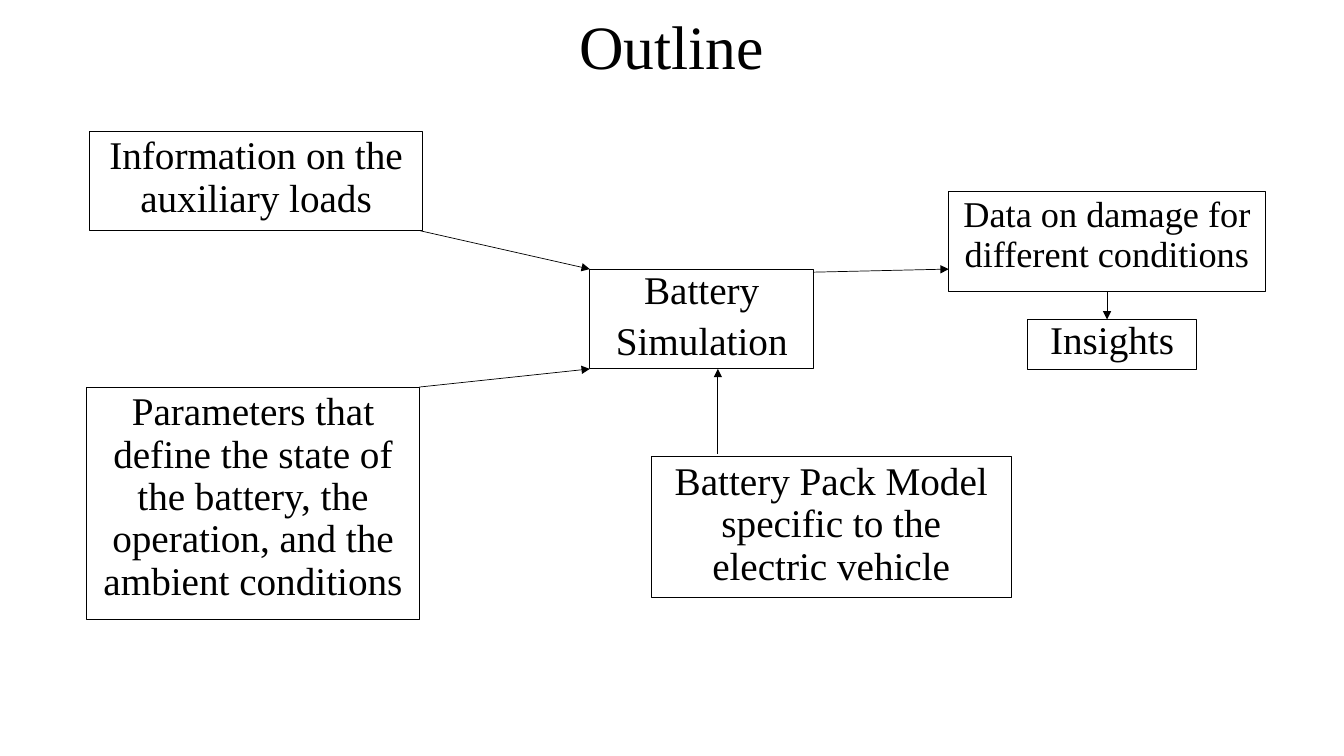
from lxml import etree
from pptx import Presentation
from pptx.dml.color import RGBColor
from pptx.enum import shapes, text
from pptx.oxml import ns
from pptx.util import Inches, Pt

BLACK = RGBColor(0x00, 0x00, 0x00)


def write(frame, content, size=28, spacing=0.9, before=10, anchor=text.MSO_ANCHOR.TOP):
    """Fill a text frame with centred paragraphs, one per line of content."""
    frame.word_wrap = True
    frame.vertical_anchor = anchor
    for index, line in enumerate(content.split("\n")):
        paragraph = frame.add_paragraph() if index else frame.paragraphs[0]
        paragraph.alignment = text.PP_ALIGN.CENTER
        paragraph.line_spacing = spacing
        paragraph.space_before = Pt(before)
        run = paragraph.add_run()
        run.text = line
        run.font.name = "Times New Roman"
        run.font.size = Pt(size)
        run.font.color.rgb = BLACK


class Diagram:
    def __init__(self, slide):
        self.slide = slide
        self.box_line = Pt(0.75)
        self.arrow_line = Pt(0.5)

    def title(self, content, left, top, width, height):
        shape = self.slide.shapes.add_textbox(*map(Inches, (left, top, width, height)))
        write(shape.text_frame, content, size=44, before=0, anchor=text.MSO_ANCHOR.MIDDLE)

    def box(self, content, left, top, width, height, **style):
        shape = self.slide.shapes.add_shape(
            shapes.MSO_SHAPE.RECTANGLE, *map(Inches, (left, top, width, height)))
        shape.shadow.inherit = False
        shape.fill.background()
        shape.line.color.rgb = BLACK
        shape.line.width = self.box_line
        write(shape.text_frame, content, **style)

    def arrow(self, start, end):
        connector = self.slide.shapes.add_connector(
            shapes.MSO_CONNECTOR.STRAIGHT, *map(Inches, start + end))
        connector.line.color.rgb = BLACK
        connector.line.width = self.arrow_line
        properties = connector._element.spPr
        etree.SubElement(properties.find(ns.qn("a:ln")), ns.qn("a:tailEnd"), type="triangle")
        etree.SubElement(properties, ns.qn("a:effectLst"))


def main():
    presentation = Presentation()
    presentation.slide_width = Inches(13.33)
    presentation.slide_height = Inches(7.5)
    slide = presentation.slides.add_slide(presentation.slide_layouts[6])
    diagram = Diagram(slide)

    diagram.title("Outline", 0, 0, 13.33, 0.98)

    diagram.box("Information on the auxiliary loads", 0.89, 1.3, 3.3, 0.99)
    diagram.box("Battery\nSimulation", 5.85, 2.67, 2.22, 0.99, spacing=0.8)
    diagram.box("Parameters that define the state of the battery, the operation, "
                "and the ambient conditions", 0.86, 3.84, 3.3, 2.31)
    diagram.box("Data on damage for different conditions", 9.41, 1.9, 3.14, 0.99, size=25.9)
    diagram.box("Battery Pack Model specific to the electric vehicle", 6.46, 4.53, 3.57, 1.4)
    diagram.box("Insights", 10.19, 3.17, 1.68, 0.5, spacing=0.8)

    for start, end in (
        ((4.17, 2.29), (5.85, 2.67)),    # auxiliary loads to simulation
        ((4.16, 3.84), (5.85, 3.66)),    # parameters to simulation
        ((7.12, 4.5), (7.12, 3.66)),     # pack model to simulation
        ((8.07, 2.7), (9.41, 2.67)),     # simulation to damage data
        ((10.98, 2.89), (10.98, 3.17)),  # damage data to insights
    ):
        diagram.arrow(start, end)

    presentation.save("out.pptx")


if __name__ == "__main__":
    main()
